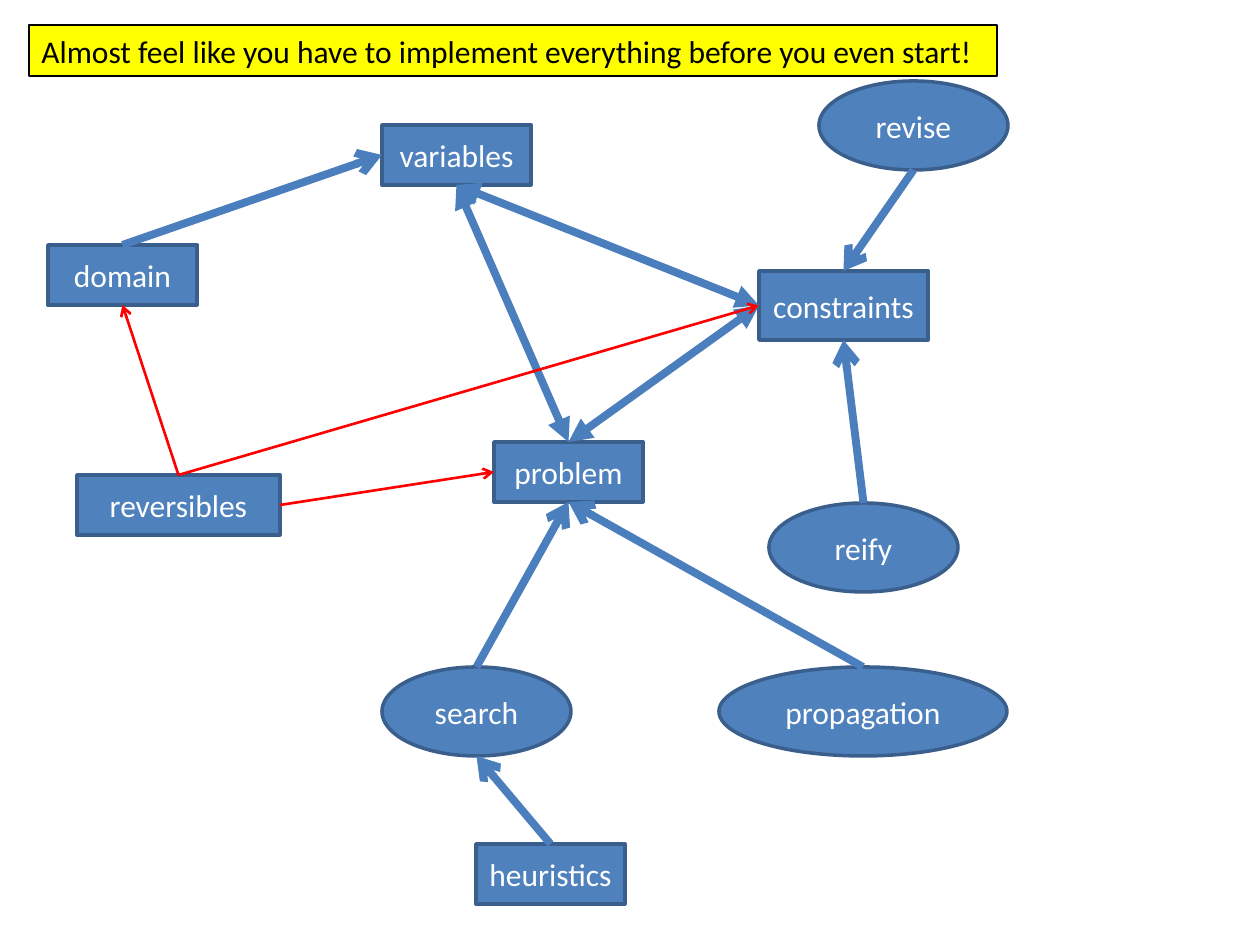
from dataclasses import dataclass

from lxml import etree
from pptx import Presentation
from pptx import util as u
from pptx.dml import color
from pptx.enum import shapes, text
from pptx.oxml import ns

PX_PER_INCH = 126


def px(length: float) -> u.Emu:
    return u.Emu(round(length * u.Inches(1) / PX_PER_INCH))


def rgb(value: str) -> color.RGBColor:
    return color.RGBColor.from_string(value)


@dataclass(frozen=True)
class Theme:
    font: str = "Calibri"
    size: int = 18
    node_fill: str = "4F81BD"
    node_line: str = "3A5F8C"
    node_text: str = "FFFFFF"
    banner_fill: str = "FFFF00"
    banner_ink: str = "000000"
    link: str = "4B7EBC"
    reversible_link: str = "FF0000"


@dataclass(frozen=True)
class Node:
    label: str
    left: int
    top: int
    width: int = 149
    height: int = 60
    kind: shapes.MSO_SHAPE = shapes.MSO_SHAPE.RECTANGLE

    def anchor(self, side: str) -> tuple[float, float]:
        across, down = {"top": (0.5, 0), "left": (0, 0.5),
                        "bottom": (0.5, 1), "right": (1, 0.5)}[side]
        return self.left + across * self.width, self.top + down * self.height


@dataclass(frozen=True)
class Link:
    start: str
    start_side: str
    end: str
    end_side: str
    two_way: bool = False


THEME = Theme()


def oval(label: str, left: int, top: int, width: int = 189) -> Node:
    return Node(label, left, top, width, 89, shapes.MSO_SHAPE.OVAL)


NODES = [
    Node("domain", 48, 245),
    Node("variables", 382, 125),
    Node("constraints", 759, 271, 169, 69),
    Node("problem", 494, 442),
    oval("search", 382, 667),
    oval("propagation", 719, 667, 288),
    oval("revise", 819, 81),
    oval("reify", 769, 503),
    Node("heuristics", 476, 844),
    Node("reversibles", 77, 475, 203),
]

LINKS = [
    Link("domain", "top", "variables", "left"),
    Link("variables", "bottom", "constraints", "left", two_way=True),
    Link("variables", "bottom", "problem", "top", two_way=True),
    Link("problem", "top", "constraints", "left", two_way=True),
    Link("revise", "bottom", "constraints", "top"),
    Link("reify", "top", "constraints", "bottom"),
    Link("search", "top", "problem", "bottom"),
    Link("propagation", "top", "problem", "bottom"),
    Link("heuristics", "top", "search", "bottom"),
]

REVERSIBLE_LINKS = [
    Link("reversibles", "top", "domain", "bottom"),
    Link("reversibles", "right", "problem", "left"),
    Link("reversibles", "top", "constraints", "left"),
]

BANNER = Node("Almost feel like you have to implement everything before you even start!",
              29, 25, 968, 51)


def draw_box(page, node: Node, fill: str, line: str, line_width: float,
             ink: str, align: text.PP_ALIGN, wrap: bool) -> None:
    box = page.shapes.add_shape(node.kind, px(node.left), px(node.top),
                                px(node.width), px(node.height))
    box.shadow.inherit = False
    box.fill.solid()
    box.fill.fore_color.rgb = rgb(fill)
    box.line.color.rgb = rgb(line)
    box.line.width = u.Pt(line_width)
    frame = box.text_frame
    frame.text = node.label
    frame.word_wrap = wrap
    frame.vertical_anchor = text.MSO_ANCHOR.MIDDLE
    para = frame.paragraphs[0]
    para.alignment = align
    span = para.runs[0]
    span.font.name = THEME.font
    span.font.size = u.Pt(THEME.size)
    span.font.color.rgb = rgb(ink)


def draw_link(page, link: Link, nodes: dict[str, Node], ink: str, width: float) -> None:
    start = nodes[link.start].anchor(link.start_side)
    end = nodes[link.end].anchor(link.end_side)
    connector = page.shapes.add_connector(shapes.MSO_CONNECTOR.STRAIGHT,
                                          *map(px, start + end))
    connector.line.color.rgb = rgb(ink)
    connector.line.width = u.Pt(width)
    # Arrowheads, then an empty effect list to drop the shadow
    line = connector.line._get_or_add_ln()
    ends = ("a:headEnd", "a:tailEnd") if link.two_way else ("a:tailEnd",)
    for tag in ends:
        etree.SubElement(line, ns.qn(tag), type="triangle" if link.two_way else "arrow")
    etree.SubElement(connector._element.spPr, ns.qn("a:effectLst"))


def main() -> None:
    deck = Presentation()
    deck.slide_width, deck.slide_height = u.Inches(10), u.Inches(7.5)
    page = deck.slides.add_slide(deck.slide_layouts[6])

    # Concepts
    for node in NODES:
        draw_box(page, node, THEME.node_fill, THEME.node_line, 2,
                 THEME.node_text, text.PP_ALIGN.CENTER, wrap=False)

    # Relations between them
    nodes = {node.label: node for node in NODES}
    for link in LINKS:
        draw_link(page, link, nodes, THEME.link, 4.5)
    for link in REVERSIBLE_LINKS:
        draw_link(page, link, nodes, THEME.reversible_link, 1.5)

    # Remark across the top
    draw_box(page, BANNER, THEME.banner_fill, THEME.banner_ink, 0.75,
             THEME.banner_ink, text.PP_ALIGN.LEFT, wrap=True)

    deck.save("out.pptx")


if __name__ == "__main__":
    main()
